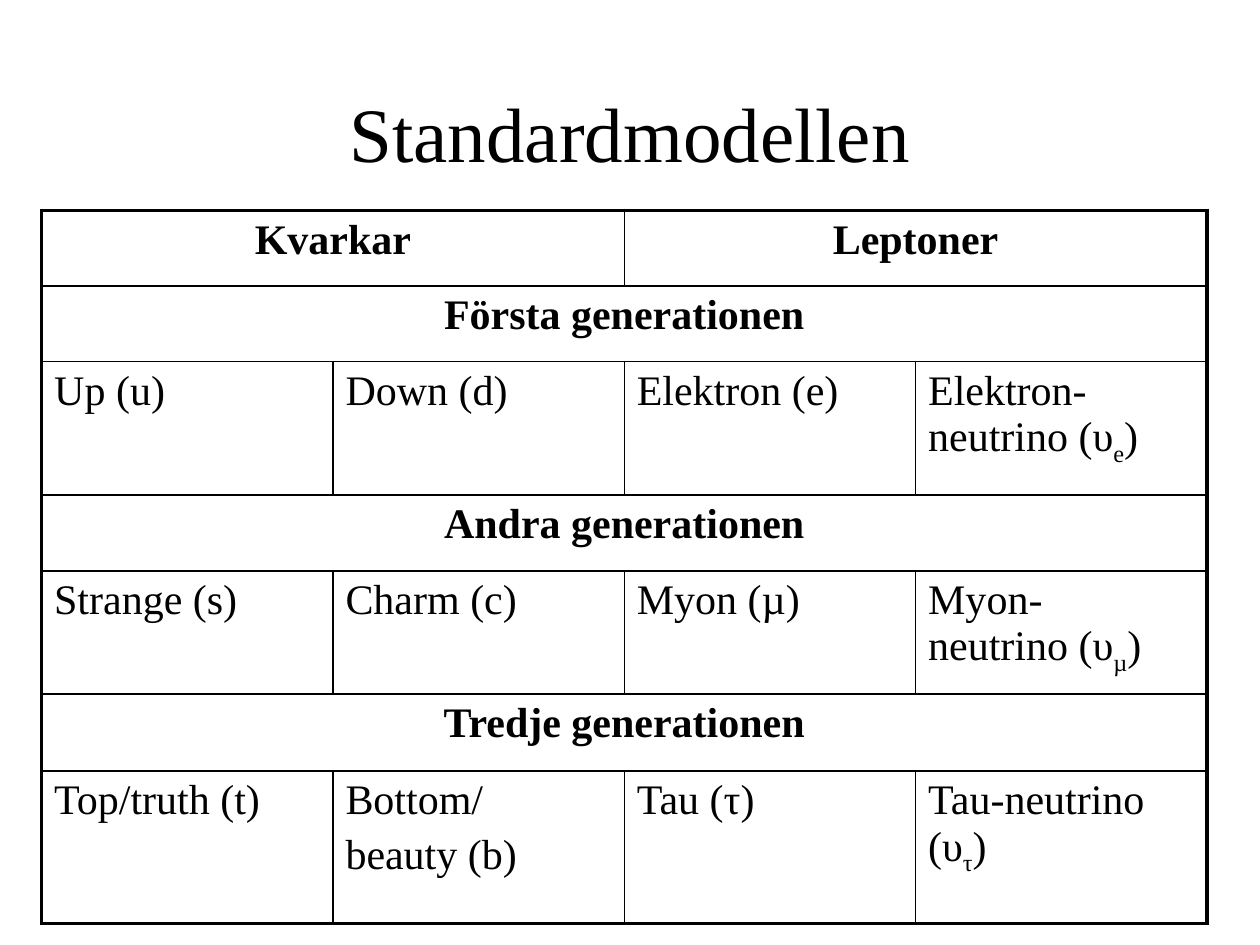
from dataclasses import dataclass

from lxml import etree
from pptx import Presentation
from pptx import util as u
from pptx.dml.color import RGBColor
from pptx.enum import text
from pptx.oxml.ns import qn


@dataclass(frozen=True)
class Theme:
    font: str = "Times New Roman"
    ink: str = "000000"
    title_size: float = 44
    cell_size: float = 24
    cell_gap: float = 4.8
    thin: float = 1
    thick: float = 2.25


# A row with fewer entries than columns has its entries span equal shares.
# An entry is a text, or a symbol's leading text paired with its subscript.
ROWS = [
    (0.6, ["Kvarkar", "Leptoner"]),
    (0.6, ["Första generationen"]),
    (1.06, ["Up (u)", "Down (d)", "Elektron (e)", ("Elektron-neutrino (υ", "e")]),
    (0.6, ["Andra generationen"]),
    (0.98, ["Strange (s)", "Charm (c)", "Myon (µ)", ("Myon-\vneutrino (υ", "µ")]),
    (0.61, ["Tredje generationen"]),
    (1.21, ["Top/truth (t)", "Bottom/\nbeauty (b)", "Tau (τ)", ("Tau-neutrino (υ", "τ")]),
]
COLUMNS = 4


class SlideBuilder:
    def __init__(self, prs, theme):
        self.theme = theme
        self.s = prs.slides.add_slide(prs.slide_layouts[5])

    def style(self, p, size, bold=False):
        for r in p.runs:
            r.font.name = self.theme.font
            r.font.size = u.Pt(size)
            r.font.bold = bold
            r.font.color.rgb = RGBColor.from_string(self.theme.ink)

    def title(self, wording, left, top, width, height):
        sp = self.s.shapes.title
        sp.left, sp.top = u.Inches(left), u.Inches(top)
        sp.width, sp.height = u.Inches(width), u.Inches(height)
        tf = sp.text_frame
        tf.text = wording
        tf.vertical_anchor = text.MSO_ANCHOR.MIDDLE
        p = tf.paragraphs[0]
        p.alignment = text.PP_ALIGN.CENTER
        self.style(p, self.theme.title_size)

    def borders(self, cell, widths):
        """Draw the given sides; the schema wants them in the order L, R, T, B."""
        tc_pr = cell._tc.get_or_add_tcPr()
        for side, width in widths.items():
            ln = etree.SubElement(tc_pr, qn(f"a:ln{side}"), w=str(u.Pt(width)))
            fill = etree.SubElement(ln, qn("a:solidFill"))
            etree.SubElement(fill, qn("a:srgbClr"), val=self.theme.ink)

    def fill_cell(self, cell, entry, heading):
        tf = cell.text_frame
        if isinstance(entry, tuple):
            p = tf.paragraphs[0]
            p.text, subscript = entry
            r = p.add_run()
            r.text = subscript
            r._r.get_or_add_rPr().set("baseline", "-25000")
            p.add_run().text = ")"
        else:
            tf.text = entry
        for p in tf.paragraphs:
            p.space_before = u.Pt(self.theme.cell_gap)
            p.alignment = text.PP_ALIGN.CENTER if heading else text.PP_ALIGN.LEFT
            self.style(p, self.theme.cell_size, heading)

    def table(self, rows, columns, left, top, width):
        height = sum(h for h, _ in rows)
        table = self.s.shapes.add_table(
            len(rows), columns, u.Inches(left), u.Inches(top),
            u.Inches(width), u.Inches(height)).table
        table.first_row = table.horz_banding = False

        def line(is_outer):
            return self.theme.thick if is_outer else self.theme.thin

        for i, (row_height, entries) in enumerate(rows):
            table.rows[i].height = u.Inches(row_height)
            span = columns // len(entries)
            for j, entry in enumerate(entries):
                first, last = j * span, (j + 1) * span - 1
                origin = table.cell(i, first)
                if span > 1:
                    origin.merge(table.cell(i, last))
                self.fill_cell(origin, entry, heading=span > 1)
                for c in range(first, last + 1):
                    widths = {}
                    if c == first:
                        widths["L"] = line(first == 0)
                    if c in (first, last):
                        widths["R"] = line(last == columns - 1)
                    widths["T"] = line(i == 0)
                    widths["B"] = line(i == len(rows) - 1)
                    cell = table.cell(i, c)
                    self.borders(cell, widths)
                    cell.fill.background()


def main():
    prs = Presentation()
    prs.slide_width, prs.slide_height = u.Inches(10), u.Inches(7.5)
    slide = SlideBuilder(prs, Theme())
    slide.title("Standardmodellen", 0.75, 0.42, 8.5, 1.25)
    slide.table(ROWS, COLUMNS, 0.33, 1.67, 9.25)
    prs.save("out.pptx")


if __name__ == "__main__":
    main()
